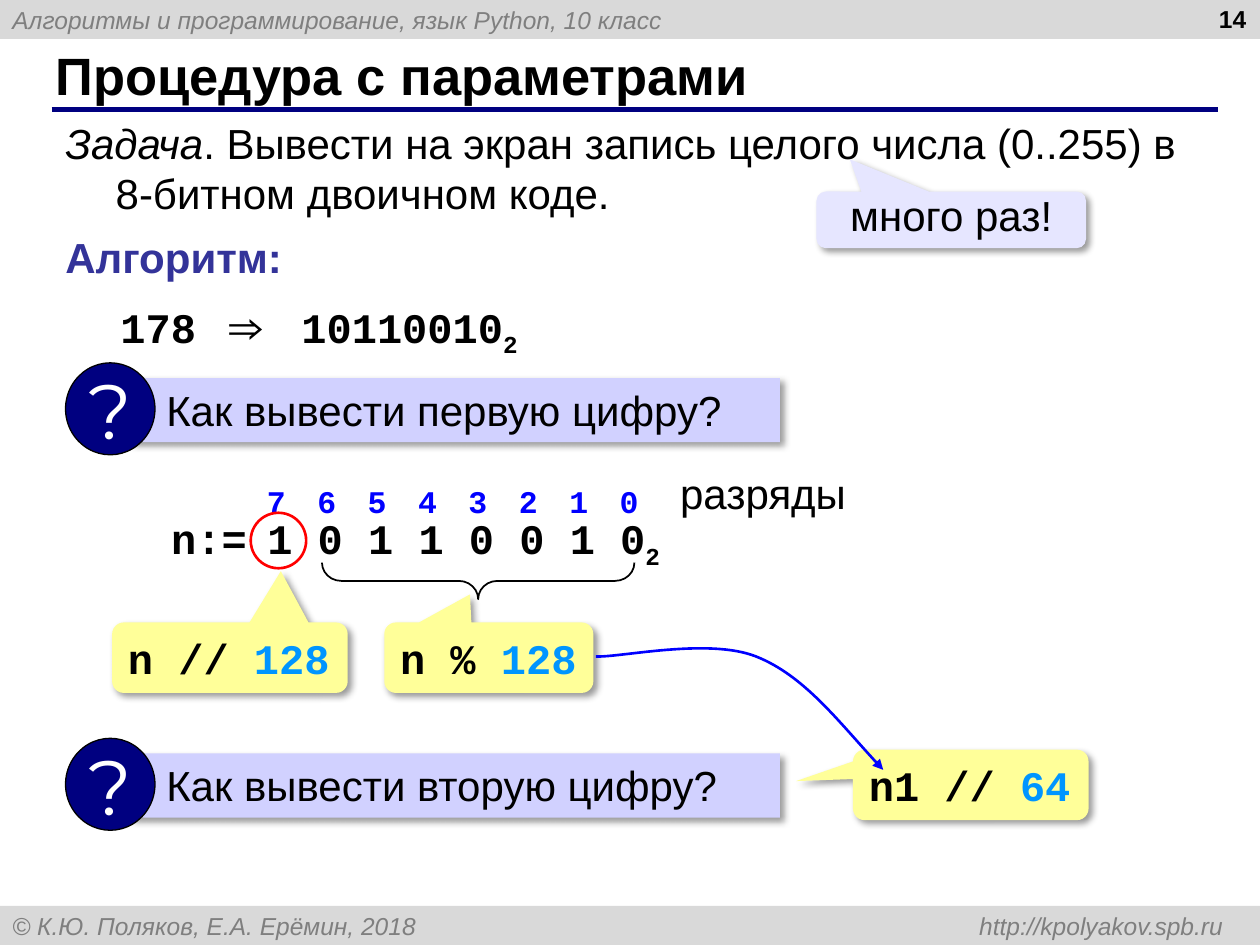
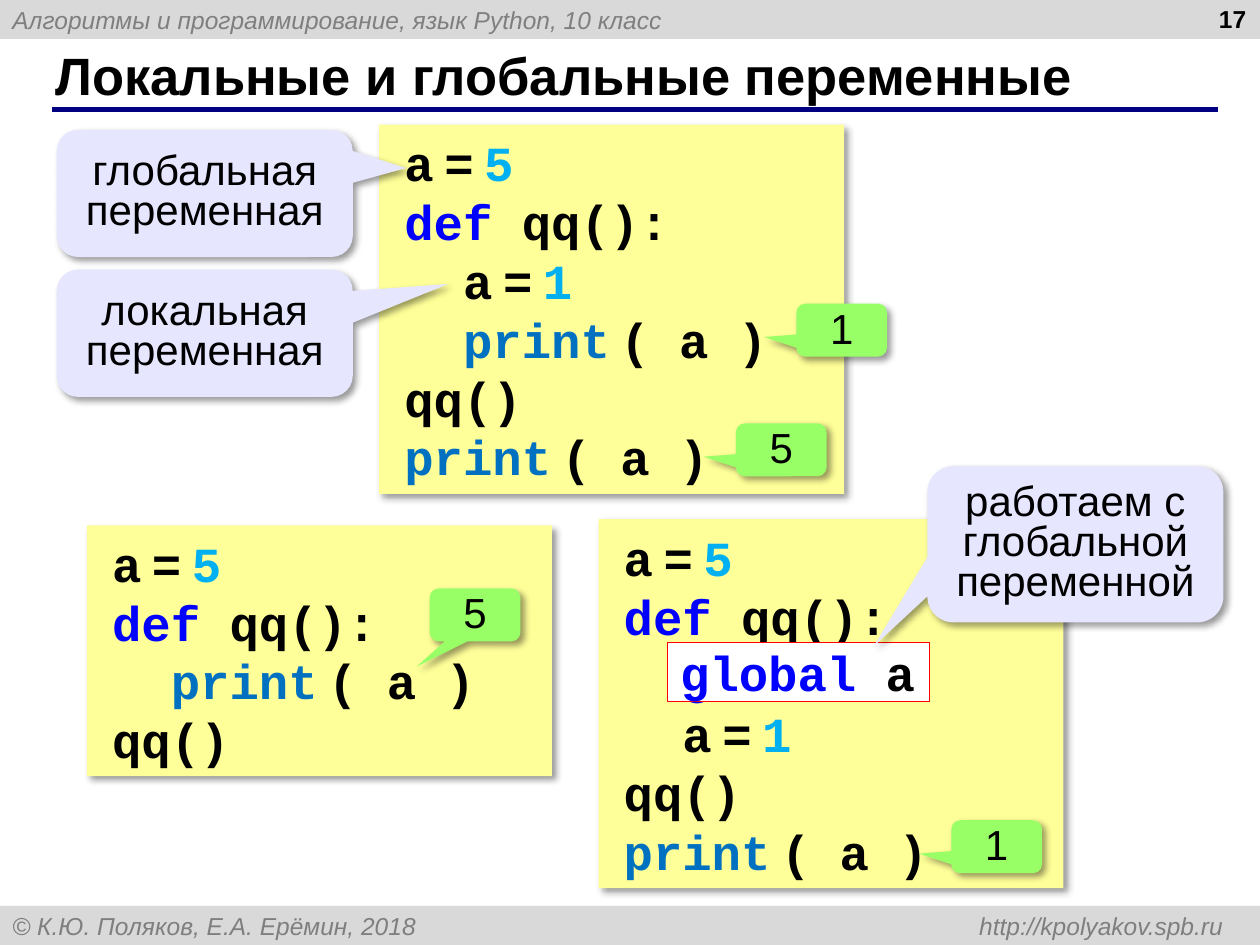
"""Build two lesson slides about procedures and variable scope in Python."""
import lxml.etree
import pptx
import pptx.dml.color
import pptx.enum.shapes
import pptx.enum.text
import pptx.oxml.ns
import pptx.util

Inches = pptx.util.Inches
Pt = pptx.util.Pt
qn = pptx.oxml.ns.qn
SHAPES = pptx.enum.shapes.MSO_SHAPE
ANCHOR = pptx.enum.text.MSO_ANCHOR
ALIGN = pptx.enum.text.PP_ALIGN

BLACK, WHITE, NAVY, RED, BLUE = "000000", "FFFFFF", "000080", "FF0000", "0000FF"
BAND, GREY, INDIGO = "D9D9D9", "7F7F7F", "333399"
QUESTION, NOTE, CODE, OUTPUT = "D1D1FF", "E6E6FF", "FFFF99", "99FF66"
DIVISOR, NUMBER, BUILTIN = "0095FF", "00B0F0", "0070C0"
MONO = {"font": "Courier New", "bold": True}
CENTERED = {"align": ALIGN.CENTER, "anchor": ANCHOR.MIDDLE}
NARROW = (" ", {"size": 10})


def rgb(value):
    """Turn a hex string into a colour."""
    return pptx.dml.color.RGBColor.from_string(value)


def write_text(frame, paragraphs, anchor=ANCHOR.TOP, align=ALIGN.LEFT, wrap=True,
               margins=(0.1, 0.05, 0.1, 0.05), spacing=None, hanging=0, tabs=(), **style):
    """Fill a frame with paragraphs, each a string or a list of runs."""
    frame.word_wrap = wrap
    frame.auto_size = pptx.enum.text.MSO_AUTO_SIZE.NONE
    frame.vertical_anchor = anchor
    (frame.margin_left, frame.margin_top,
     frame.margin_right, frame.margin_bottom) = map(Inches, margins)
    if isinstance(paragraphs, str):
        paragraphs = [paragraphs]
    for index, runs in enumerate(paragraphs):
        paragraph = frame.add_paragraph() if index else frame.paragraphs[0]
        paragraph.alignment = align
        if spacing:
            paragraph.line_spacing = spacing
        properties = paragraph._p.get_or_add_pPr()
        if hanging:
            properties.set("marL", str(Inches(hanging)))
            properties.set("indent", str(-Inches(hanging)))
        if tabs:
            stops = lxml.etree.SubElement(properties, qn("a:tabLst"))
            for position, side in tabs:
                lxml.etree.SubElement(stops, qn("a:tab"), pos=str(Inches(position)), algn=side)
        for part in [runs] if isinstance(runs, str) else runs:
            text, changes = (part, {}) if isinstance(part, str) else part
            write_run(paragraph, text, **{**style, **changes})


def write_run(paragraph, text, size=24, font="Arial", color=BLACK,
              bold=False, italic=False, subscript=False):
    """Add one formatted run to a paragraph."""
    run = paragraph.add_run()
    run.text = text
    run.font.size = Pt(size)
    run.font.name = font
    run.font.color.rgb = rgb(color)
    run.font.bold = bold
    run.font.italic = italic
    if subscript:
        run._r.get_or_add_rPr().set("baseline", "-25000")


class Lesson:
    """Holds the deck style and the current slide."""

    def __init__(self):
        """Start an empty 10 by 7.5 inch deck."""
        self.deck = pptx.Presentation()
        self.deck.slide_width, self.deck.slide_height = Inches(10), Inches(7.5)
        self.slide = None

    def start(self, title, number):
        """Add a slide with bands, rule, title and number."""
        self.slide = self.deck.slides.add_slide(self.deck.slide_layouts[5])
        band_style = {"size": 14, "color": GREY, "italic": True, "anchor": ANCHOR.MIDDLE}
        self.shape(SHAPES.RECTANGLE, (0, 0, 10, 0.31), BAND,
                   "Алгоритмы и программирование, язык Python, 10 класс", **band_style)
        self.shape(SHAPES.RECTANGLE, (0, 7.19, 10, 0.31), BAND,
                   "© К.Ю. Поляков, Е.А. Ерёмин, 2018\thttp://kpolyakov.spb.ru",
                   tabs=[(9.61, "r")], **band_style)
        self.rule(0.41, 9.67, 0.87)
        heading = self.slide.shapes.title
        heading.left, heading.top = Inches(0.34), Inches(0.33)
        heading.width, heading.height = Inches(9.16), Inches(0.52)
        write_text(heading.text_frame, title, size=30, bold=True, anchor=ANCHOR.MIDDLE)
        self.text((7.66, -0.02, 2.33, 0.52), number, size=14, bold=True, align=ALIGN.RIGHT)

    def rule(self, left, right, top):
        """Draw the line under the title."""
        line = self.slide.shapes.add_connector(
            pptx.enum.shapes.MSO_CONNECTOR.STRAIGHT,
            Inches(left), Inches(top), Inches(right), Inches(top))
        line.line.color.rgb = rgb(NAVY)
        line.line.width = Pt(3)
        lxml.etree.SubElement(line._element.spPr, qn("a:effectLst"))

    def text(self, place, paragraphs, **style):
        """Add a text box."""
        box = self.slide.shapes.add_textbox(*map(Inches, place))
        write_text(box.text_frame, paragraphs, **style)

    def shape(self, kind, place, fill=None, paragraphs=None, line=None, width=0.75,
              shadow=False, adjust=(), **style):
        """Add a preset shape with optional text and shadow."""
        item = self.slide.shapes.add_shape(kind, *map(Inches, place))
        for index, value in enumerate(adjust):
            item.adjustments[index] = value
        self.paint(item, fill, line, width)
        if shadow:
            self.cast_shadow(item)
        if paragraphs:
            write_text(item.text_frame, paragraphs, **style)
        return item

    def paint(self, item, fill, line, width):
        """Set fill and outline, and drop the theme shadow."""
        item.shadow.inherit = False
        if fill:
            item.fill.solid()
            item.fill.fore_color.rgb = rgb(fill)
        else:
            item.fill.background()
        if line:
            item.line.color.rgb = rgb(line)
            item.line.width = Pt(width)
        else:
            item.line.fill.background()

    def cast_shadow(self, item):
        """Give a shape the soft shadow of the deck."""
        effects = item._element.spPr.find(qn("a:effectLst"))
        outer = lxml.etree.SubElement(effects, qn("a:outerShdw"), blurRad=str(Pt(4)),
                                      dist=str(Pt(3)), dir="2700000", algn="tl",
                                      rotWithShape="0")
        tint = lxml.etree.SubElement(outer, qn("a:srgbClr"), val=BLACK)
        lxml.etree.SubElement(tint, qn("a:alpha"), val="40000")

    def callout(self, place, tip, fill, paragraphs, **style):
        """Add a rounded callout whose tip is given relative to its size."""
        self.shape(SHAPES.ROUNDED_RECTANGULAR_CALLOUT, place, fill, paragraphs,
                   shadow=True, adjust=(*tip, 0.167), **style)

    def note(self, place, tip, paragraphs):
        """Add a lilac remark."""
        self.callout(place, tip, NOTE, paragraphs, spacing=0.8, **CENTERED)

    def formula(self, place, tip, expression, divisor):
        """Add a yellow callout with an expression."""
        self.callout(place, tip, CODE, [[expression, (divisor, {"color": DIVISOR})]],
                     wrap=False, **MONO)

    def output(self, left, top, value, tip=(-0.857, 0.131)):
        """Add a green callout with a printed value."""
        self.callout((left, top, 0.72, 0.42), tip, OUTPUT, value, spacing=0.8,
                     margins=(0.1, 0.08, 0.1, 0.05), **CENTERED)

    def question(self, top, wording):
        """Add a question bar with its round badge."""
        self.shape(SHAPES.RECTANGLE, (1.03, top, 5.16, 0.51), QUESTION, wording,
                   shadow=True, margins=(0.29, 0.05, 0.1, 0.05))
        self.shape(SHAPES.OVAL, (0.52, top - 0.12, 0.71, 0.73), NAVY, "?", line=BLACK,
                   wrap=False, size=44, font="Montserrat", color=WHITE, **CENTERED)

    def listing(self, left, top, height, lines):
        """Add a yellow code block."""
        self.shape(SHAPES.RECTANGLE, (left, top, 3.69, height), CODE, lines, shadow=True,
                   anchor=ANCHOR.MIDDLE, margins=(0.2, 0.05, 0.1, 0.05), size=28, **MONO)

    def curve(self, start, *controls):
        """Draw a Bezier curve with an arrowhead at its start."""
        builder = self.slide.shapes.build_freeform(*map(Inches, start))
        builder.add_line_segments([tuple(map(Inches, point)) for point in controls], close=False)
        item = builder.convert_to_shape()
        self.paint(item, None, BLUE, 1.5)
        lxml.etree.SubElement(item.line._get_or_add_ln(), qn("a:headEnd"), type="triangle")
        segments = item._element.spPr.findall(".//" + qn("a:lnTo"))
        outline = segments[0].getparent()
        for index, segment in enumerate(segments):
            if index % 3 == 0:
                bezier = lxml.etree.SubElement(outline, qn("a:cubicBezTo"))
            bezier.append(segment[0])
            outline.remove(segment)


def assignment(value, indent=""):
    """Return the runs of an assignment to a."""
    return [indent + "a", NARROW, "=", NARROW, (value, {"color": NUMBER})]


def printing(indent=""):
    """Return the runs that print a."""
    return [(indent + "print", {"color": BUILTIN}), NARROW, "( a )"]


def add_parameters_slide(lesson):
    """Show how the bits of a number are found."""
    lesson.start("Процедура с параметрами", "14")
    lesson.text((0.42, 0.88, 9.27, 0.91),
                [[("Задача", {"italic": True}),
                  ". Вывести на экран запись целого числа (0..255) в 8-битном двоичном коде."]],
                hanging=0.4)
    lesson.note((6.48, 1.52, 2.14, 0.45), (-0.376, -1.069), "много раз!")
    lesson.text((0.42, 1.79, 1.94, 0.51), "Алгоритм:", color=INDIGO, bold=True, wrap=False)

    base = ("2", {"subscript": True})
    for left, width, part in ((0.85, 0.81, "178"), (1.69, 0.53, "⇒"),
                              (2.24, 2.02, ["10110010", base])):
        lesson.text((left, 2.34, width, 0.51), [part], align=ALIGN.CENTER, wrap=False, **MONO)
    lesson.question(3, "Как вывести первую цифру?")

    lesson.text((2.02, 3.78, 3.24, 0.4), "\t".join("76543210"), size=18, color=BLUE,
                tabs=[(0.4 * place, "l") for place in range(1, 8)], **MONO)
    lesson.text((2, 4.02, 3.36, 0.51), [["1 0 1 1 0 0 1 0", base]],
                align=ALIGN.CENTER, wrap=False, **MONO)
    lesson.text((5.3, 3.66, 1.53, 0.51), "разряды", wrap=False)
    lesson.text((1.26, 4.02, 0.81, 0.51), "n:=", wrap=False, **MONO)
    lesson.shape(SHAPES.OVAL, (1.99, 4.07, 0.44, 0.44), line=RED, width=1.5)

    lesson.formula((0.89, 4.94, 1.87, 0.56), (0.216, -1.227), "n // ", "128")
    remaining_bits = lesson.shape(SHAPES.LEFT_BRACE, (3.65, 3.37, 0.29, 2.48),
                                  line=BLACK, width=1, adjust=(0.527, 0.5))
    remaining_bits.rotation = 270
    lesson.formula((3.05, 4.94, 1.66, 0.56), (-0.09, -0.898), "n % ", "128")
    lesson.question(5.98, "Как вывести вторую цифру?")
    lesson.formula((6.77, 5.95, 1.87, 0.56), (-0.742, -0.054), "n1 // ", "64")
    lesson.curve((7.01, 6.11), (6.68, 5.76), (6.38, 5.36), (6, 5.21),
                 (5.62, 5.06), (4.92, 5.22), (4.73, 5.21))


def add_scope_slide(lesson):
    """Compare local and global variables in three programs."""
    lesson.start("Локальные и глобальные переменные", "17")
    header = [assignment("5"), [("def ", {"color": BLUE}), "qq():"]]
    global_line = [("global", {"color": BLUE}), " a"]
    lesson.listing(3.01, 0.99, 2.93,
                   header + [assignment("1", "  "), printing("  "), "qq()", printing()])
    lesson.note((0.45, 1.03, 2.35, 1.01), (0.68, -0.199), "глобальная переменная")
    lesson.note((0.45, 2.14, 2.35, 1.01), (0.822, -0.387), "локальная переменная")
    lesson.output(6.32, 2.41, "1")
    lesson.output(5.84, 3.36, "5")

    lesson.listing(0.69, 4.17, 1.99, header + [printing("  "), "qq()"])
    lesson.output(3.41, 4.67, "5", (-0.643, 0.977))

    lesson.listing(4.75, 4.12, 2.93,
                   header + [["  "] + global_line, assignment("1", "  "), "qq()", printing()])
    lesson.output(7.55, 6.51, "1")
    lesson.shape(SHAPES.RECTANGLE, (5.3, 5.1, 2.08, 0.47), WHITE, [global_line], line=RED,
                 wrap=False, margins=(0.1, 0, 0.1, 0), size=28, **MONO)
    lesson.note((7.36, 3.7, 2.35, 1.24), (-0.68, 0.65),
                ["работаем с", "глобальной переменной"])


def main():
    """Build and save the deck."""
    lesson = Lesson()
    add_parameters_slide(lesson)
    add_scope_slide(lesson)
    lesson.deck.save("out.pptx")


if __name__ == "__main__":
    main()
